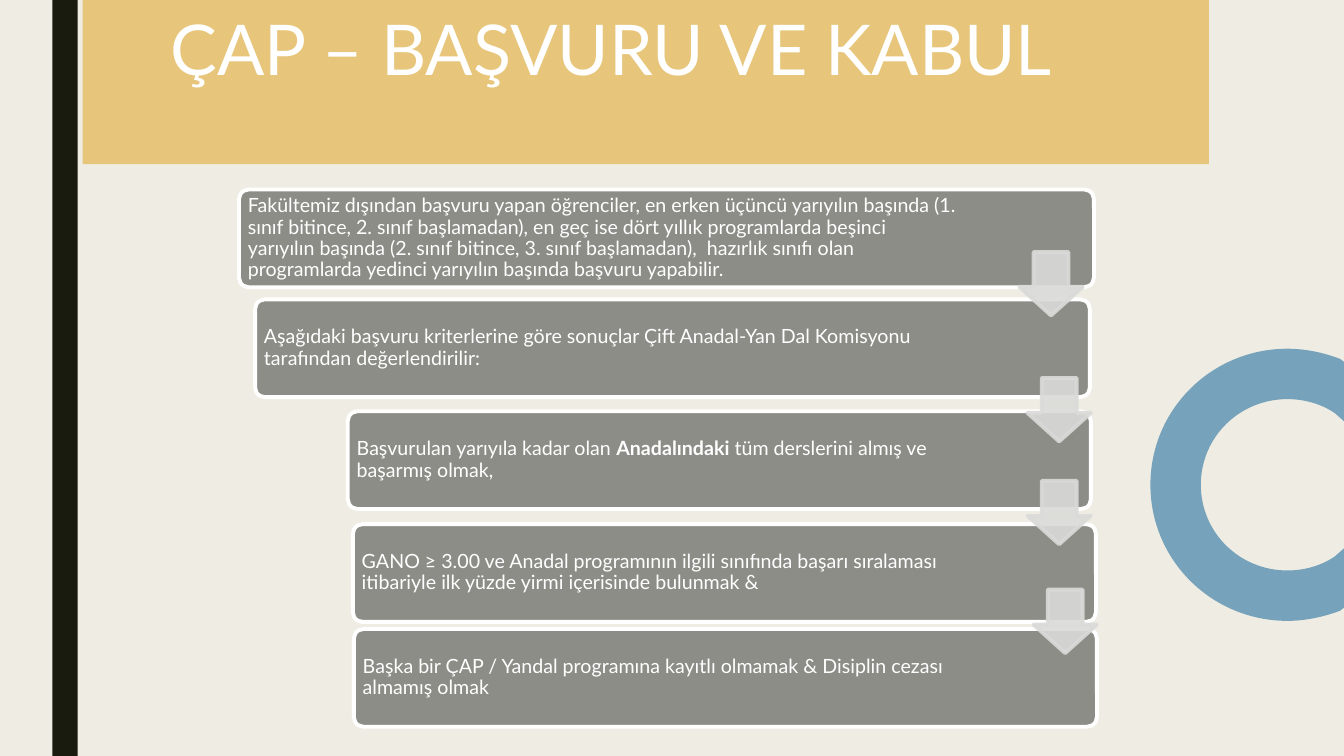
"""Build the slide on double major applications and admission."""
from dataclasses import dataclass

from lxml import etree
from pptx import Presentation
from pptx import util as u
from pptx.dml.color import RGBColor
from pptx.enum import shapes, text
from pptx.oxml import ns

FONT = "Lato"
WHITE = "FFFFFF"
PAGE_WIDTH = 13.33
PAGE_HEIGHT = 7.5
STEP_HEIGHT = 0.97
ARROW_SIZE = 0.63


@dataclass(frozen=True)
class Span:
    words: str
    bold: bool = False


@dataclass(frozen=True)
class Step:
    left: float
    top: float
    width: float
    right_inset: float
    spans: tuple[Span, ...]


@dataclass(frozen=True)
class Arrow:
    left: float
    top: float


STEPS = (
    Step(2.37, 1.88, 8.48, 1.32, (Span(
        "Fakültemiz dışından başvuru yapan öğrenciler, en erken üçüncü yarıyılın "
        "başında (1. sınıf bitince, 2. sınıf başlamadan), en geç ise dört yıllık "
        "programlarda beşinci yarıyılın başında (2. sınıf bitince, 3. sınıf "
        "başlamadan),  hazırlık sınıfı olan programlarda yedinci yarıyılın "
        "başında başvuru yapabilir."),)),
    Step(2.53, 2.97, 8.28, 1.38, (Span(
        "Aşağıdaki başvuru kriterlerine göre sonuçlar Çift Anadal-Yan Dal "
        "Komisyonu tarafından değerlendirilir:"),)),
    Step(3.45, 4.08, 7.37, 1.23, (
        Span("Başvurulan yarıyıla kadar olan "),
        Span("Anadalındaki ", bold=True),
        Span("tüm derslerini almış ve başarmış olmak,"))),
    Step(3.5, 5.2, 7.37, 1.23, (Span(
        "GANO ≥ 3.00 ve Anadal programının ilgili sınıfında başarı sıralaması "
        "itibariyle ilk yüzde yirmi içerisinde bulunmak &"),)),
    Step(3.51, 6.24, 7.37, 1.23, (Span(
        "Başka bir ÇAP / Yandal programına kayıtlı olmamak & Disiplin cezası "
        "almamış olmak"),)),
)
ARROWS = (Arrow(10.11, 2.5), Arrow(10.19, 3.75), Arrow(10.19, 4.77), Arrow(10.25, 5.85))

RING_START = (12.77, 3.46)
RING_SEGMENTS = (
    ((12.95, 3.46), (13.13, 3.5), (13.29, 3.56)),
    ((13.33, 3.59),),
    ((13.33, 4.18),),
    ((13.24, 4.1),),
    ((13.11, 4.01), (12.94, 3.96), (12.77, 3.96)),
    ((12.29, 3.96), (11.91, 4.34), (11.91, 4.81)),
    ((11.91, 5.28), (12.29, 5.66), (12.77, 5.66)),
    ((12.94, 5.66), (13.11, 5.61), (13.24, 5.52)),
    ((13.33, 5.44),),
    ((13.33, 6.03),),
    ((13.29, 6.06),),
    ((13.13, 6.12), (12.95, 6.16), (12.77, 6.16)),
    ((12.02, 6.16), (11.41, 5.56), (11.41, 4.81)),
    ((11.41, 4.06), (12.02, 3.46), (12.77, 3.46)),
)


def paint(fill, color: str, alpha: int = 100) -> None:
    """Make a fill solid, with an opacity in percent."""
    fill.solid()
    fill.fore_color.rgb = RGBColor.from_string(color)
    if alpha < 100:
        for node in fill._xPr.iter(ns.qn("a:srgbClr")):
            etree.SubElement(node, ns.qn("a:alpha"), val=str(alpha * 1000))


def style(shape, color: str, alpha: int = 100, border: str = "") -> None:
    """Set the fill and border of a shape and drop its shadow."""
    shape.shadow.inherit = False
    paint(shape.fill, color, alpha)
    if border:
        shape.line.width = u.Pt(2.75)
        paint(shape.line.fill, border, alpha)
    else:
        shape.line.fill.background()


def add_box(page, kind, left: float, top: float, width: float, height: float):
    """Add a preset shape measured in inches."""
    return page.shapes.add_shape(
        kind, u.Inches(left), u.Inches(top), u.Inches(width), u.Inches(height))


def write(box, spans: tuple[Span, ...], size: int, spacing: float, anchor,
          insets: tuple[float, float, float, float]) -> None:
    """Write left-aligned spans into a shape; insets run left, top, right, bottom."""
    frame = box.text_frame
    frame.word_wrap = True
    frame.vertical_anchor = anchor
    (frame.margin_left, frame.margin_top,
     frame.margin_right, frame.margin_bottom) = map(u.Inches, insets)
    para = frame.paragraphs[0]
    para.alignment = text.PP_ALIGN.LEFT
    para.line_spacing = spacing
    for span in spans:
        run = para.add_run()
        run.text = span.words
        run.font.name = FONT
        run.font.size = u.Pt(size)
        run.font.bold = span.bold
        run.font.color.rgb = RGBColor.from_string(WHITE)


def add_title(page) -> None:
    """Add the title band."""
    band = add_box(page, shapes.MSO_SHAPE.RECTANGLE, 0.82, 0, 11.17, 1.63)
    style(band, "E6C069", alpha=85)
    write(band, (Span("ÇAP – BAŞVURU VE KABUL"),), 50, 0.85,
          text.MSO_ANCHOR.TOP, (0.87, 0.18, 0.1, 0.05))


def add_ring(page) -> None:
    """Add the ring cut off by the page edge, turning point triples into curves."""
    points = [(x * 100, y * 100) for segment in RING_SEGMENTS for x, y in segment]
    builder = page.shapes.build_freeform(
        RING_START[0] * 100, RING_START[1] * 100, scale=u.Inches(0.01))
    builder.add_line_segments(points)
    ring = builder.convert_to_shape()
    lines = iter(list(ring._element.iter(ns.qn("a:lnTo"))))
    for segment in RING_SEGMENTS:
        first, *others = [next(lines) for _ in segment]
        if others:
            first.tag = ns.qn("a:cubicBezTo")
        for line in others:
            first.append(line[0])
            line.getparent().remove(line)
    style(ring, "77A2BB")


def add_step(page, step: Step) -> None:
    """Add one rounded step with its text."""
    box = add_box(page, shapes.MSO_SHAPE.ROUNDED_RECTANGLE,
                  step.left, step.top, step.width, STEP_HEIGHT)
    box.adjustments[0] = 0.1
    style(box, "8C8D86", border=WHITE)
    write(box, step.spans, 14, 0.9, text.MSO_ANCHOR.MIDDLE,
          (0.06, 0.06, step.right_inset, 0.06))


def add_arrow(page, arrow: Arrow) -> None:
    """Add one arrow between two steps."""
    shape = add_box(page, shapes.MSO_SHAPE.DOWN_ARROW,
                    arrow.left, arrow.top, ARROW_SIZE, ARROW_SIZE)
    shape.adjustments[0] = 0.55
    shape.adjustments[1] = 0.45
    style(shape, "DADBD9", alpha=90, border="DADBD9")


def main() -> None:
    """Draw the slide and save the deck."""
    deck = Presentation()
    deck.slide_width = u.Inches(PAGE_WIDTH)
    deck.slide_height = u.Inches(PAGE_HEIGHT)
    page = deck.slides.add_slide(deck.slide_layouts[6])
    paint(page.background.fill, "EFEDE3")
    stripe = add_box(page, shapes.MSO_SHAPE.RECTANGLE, 0.52, 0, 0.25, PAGE_HEIGHT)
    style(stripe, "191B0E")
    add_title(page)
    add_ring(page)
    for step in STEPS:
        add_step(page, step)
    for arrow in ARROWS:
        add_arrow(page, arrow)
    deck.save("out.pptx")


if __name__ == "__main__":
    main()
